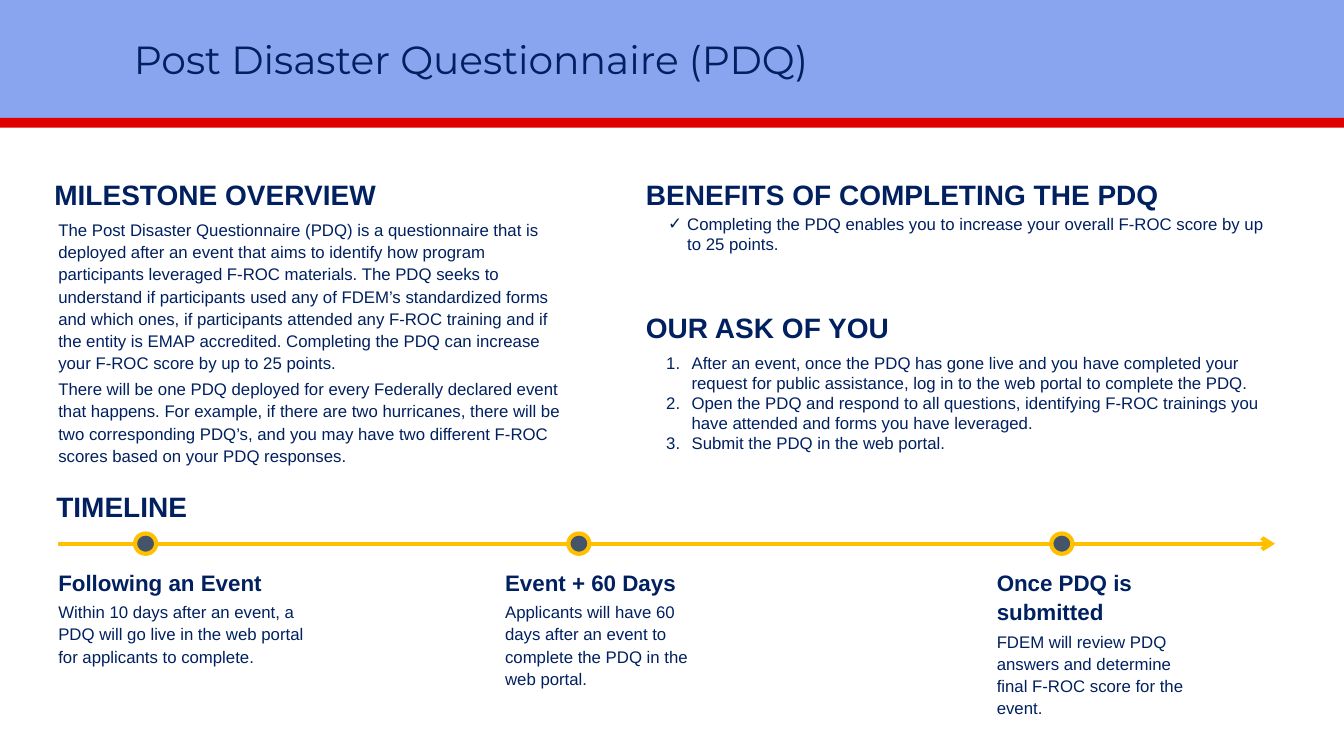
"""Build the Post Disaster Questionnaire slide."""
from dataclasses import dataclass

from lxml import etree
from pptx import Presentation
from pptx import util as u
from pptx.dml.color import RGBColor
from pptx.enum import shapes, text
from pptx.oxml import ns

NAVY, GOLD, SLATE = "002060", "FFC000", "44546A"
BLUE, RED = "89A5EF", "E00000"
WIDTH, HEIGHT = 33.87, 19.05
TIMELINE_Y = 13.7
DOT_WIDTH, DOT_HEIGHT = 0.53, 0.51


@dataclass
class Heading:
    left: float
    top: float
    width: float
    wording: str


@dataclass
class Stage:
    left: float
    width: float
    height: float
    dot_center: float
    name: str
    detail: str


HEADINGS = [
    Heading(1.37, 4.39, 9.58, "MILESTONE OVERVIEW"),
    Heading(16.28, 4.39, 14.71, "BENEFITS OF COMPLETING THE PDQ"),
    Heading(16.28, 7.75, 10.19, "OUR ASK OF YOU"),
    Heading(1.42, 12.24, 10.08, "TIMELINE"),
]

STAGES = [
    Stage(1.47, 6.25, 2.51, 3.67, "Following an Event",
          "Within 10 days after an event, a PDQ will go live in the web portal "
          "for applicants to complete."),
    Stage(12.73, 4.72, 3.07, 14.59, "Event + 60 Days",
          "Applicants will have 60 days after an event to complete the PDQ in "
          "the web portal."),
    Stage(25.12, 4.72, 3.84, 26.76, "Once PDQ is submitted",
          "FDEM will review PDQ answers and determine final F-ROC score for "
          "the event."),
]

OVERVIEW = [
    "The Post Disaster Questionnaire (PDQ) is a questionnaire that is deployed "
    "after an event that aims to identify how program participants leveraged "
    "F-ROC materials. The PDQ seeks to understand if participants used any of "
    "FDEM’s standardized forms and which ones, if participants attended any "
    "F-ROC training and if the entity is EMAP accredited. Completing the PDQ "
    "can increase your F-ROC score by up to 25 points.",
    "There will be one PDQ deployed for every Federally declared event that "
    "happens. For example, if there are two hurricanes, there will be two "
    "corresponding PDQ’s, and you may have two different F-ROC scores based on "
    "your PDQ responses.",
]

BENEFITS = [
    "Completing the PDQ enables you to increase your overall F-ROC score by up "
    "to 25 points.",
]

REQUESTS = [
    "After an event, once the PDQ has gone live and you have completed your "
    "request for public assistance, log in to the web portal to complete the PDQ.",
    "Open the PDQ and respond to all questions, identifying F-ROC trainings you "
    "have attended and forms you have leveraged.",
    "Submit the PDQ in the web portal.",
]


def color(value: str) -> RGBColor:
    return RGBColor.from_string(value)


def write(frame, wording: str, *, size: float = 12, bold: bool = False,
          font: str = "Arial", spacing: float | None = None,
          after: float = 0, marker: str = "", indent: float = 0) -> None:
    """Add one formatted paragraph to a text frame, filling an empty first one."""
    paragraph = frame.paragraphs[0]
    if paragraph.runs:
        paragraph = frame.add_paragraph()
    paragraph.alignment = text.PP_ALIGN.LEFT
    paragraph.space_after = u.Pt(after)
    if spacing:
        paragraph.line_spacing = spacing
    if marker:
        properties = paragraph._p.get_or_add_pPr()
        properties.set("marL", str(u.Cm(indent)))
        properties.set("indent", str(-u.Cm(indent)))
        etree.SubElement(properties, ns.qn("a:buFont"), typeface="Arial")
        if marker == "1.":
            etree.SubElement(properties, ns.qn("a:buAutoNum"), type="arabicPeriod")
        else:
            etree.SubElement(properties, ns.qn("a:buChar"), char=marker)
    run = paragraph.add_run()
    run.text = wording
    run.font.name = font
    run.font.size = u.Pt(size)
    run.font.bold = bold
    run.font.color.rgb = color(NAVY)


def add_frame(slide, left: float, top: float, width: float, height: float,
              *, inset: bool = False):
    box = slide.shapes.add_textbox(u.Cm(left), u.Cm(top), u.Cm(width), u.Cm(height))
    frame = box.text_frame
    frame.word_wrap = True
    if not inset:
        frame.margin_left = frame.margin_right = 0
        frame.margin_top = frame.margin_bottom = 0
    return frame


def add_block(slide, kind, left: float, top: float, width: float, height: float,
              fill: str, outline: str | None = None) -> None:
    shape = slide.shapes.add_shape(kind, u.Cm(left), u.Cm(top), u.Cm(width), u.Cm(height))
    shape.shadow.inherit = False
    shape.fill.solid()
    shape.fill.fore_color.rgb = color(fill)
    if outline:
        shape.line.color.rgb = color(outline)
        shape.line.width = u.Pt(3)
    else:
        shape.line.fill.background()


def add_header(slide) -> None:
    rectangle = shapes.MSO_SHAPE.RECTANGLE
    add_block(slide, rectangle, 0, 0, WIDTH, 3, BLUE)
    add_block(slide, rectangle, 0, 2.97, WIDTH, 0.25, RED)
    title = slide.shapes.title
    title.left, title.top = u.Cm(3.12), u.Cm(0.56)
    title.width, title.height = u.Cm(29.21), u.Cm(2.01)
    frame = title.text_frame
    frame.auto_size = text.MSO_AUTO_SIZE.NONE
    frame.vertical_anchor = text.MSO_ANCHOR.MIDDLE
    write(frame, "Post Disaster Questionnaire (PDQ)", size=28, font="Montserrat",
          spacing=0.9)
    slide.shapes._spTree.append(title._element)


def add_timeline(slide) -> None:
    arrow = slide.shapes.add_connector(
        shapes.MSO_CONNECTOR.STRAIGHT,
        u.Cm(1.47), u.Cm(TIMELINE_Y), u.Cm(32.13), u.Cm(TIMELINE_Y))
    arrow.line.color.rgb = color(GOLD)
    arrow.line.width = u.Pt(3)
    etree.SubElement(arrow.line._get_or_add_ln(), ns.qn("a:tailEnd"), type="arrow")
    etree.SubElement(arrow._element.spPr, ns.qn("a:effectLst"))
    for stage in STAGES:
        add_block(slide, shapes.MSO_SHAPE.OVAL, stage.dot_center - DOT_WIDTH / 2,
                  TIMELINE_Y - DOT_HEIGHT / 2, DOT_WIDTH, DOT_HEIGHT, SLATE, GOLD)
        frame = add_frame(slide, stage.left, 14.27, stage.width, stage.height)
        write(frame, stage.name, size=16, bold=True, spacing=1.1, after=3)
        write(frame, stage.detail, spacing=1.1, after=6)


def main() -> None:
    presentation = Presentation()
    presentation.slide_width, presentation.slide_height = u.Cm(WIDTH), u.Cm(HEIGHT)
    slide = presentation.slides.add_slide(presentation.slide_layouts[5])
    add_header(slide)
    for heading in HEADINGS:
        frame = add_frame(slide, heading.left, heading.top, heading.width, 0.89)
        write(frame, heading.wording, size=20, bold=True, spacing=1.1, after=3)
    overview = add_frame(slide, 1.47, 5.49, 12.88, 6.27)
    for wording in OVERVIEW:
        write(overview, wording, spacing=1.1, after=3)
    benefits = add_frame(slide, 16.59, 5.26, 15.8, 1.27, inset=True)
    for wording in BENEFITS:
        write(benefits, wording, marker="✓", indent=0.48)
    requests = add_frame(slide, 16.54, 8.76, 15.8, 2.82, inset=True)
    for wording in REQUESTS:
        write(requests, wording, marker="1.", indent=0.64)
    add_timeline(slide)
    presentation.save("out.pptx")


if __name__ == "__main__":
    main()
